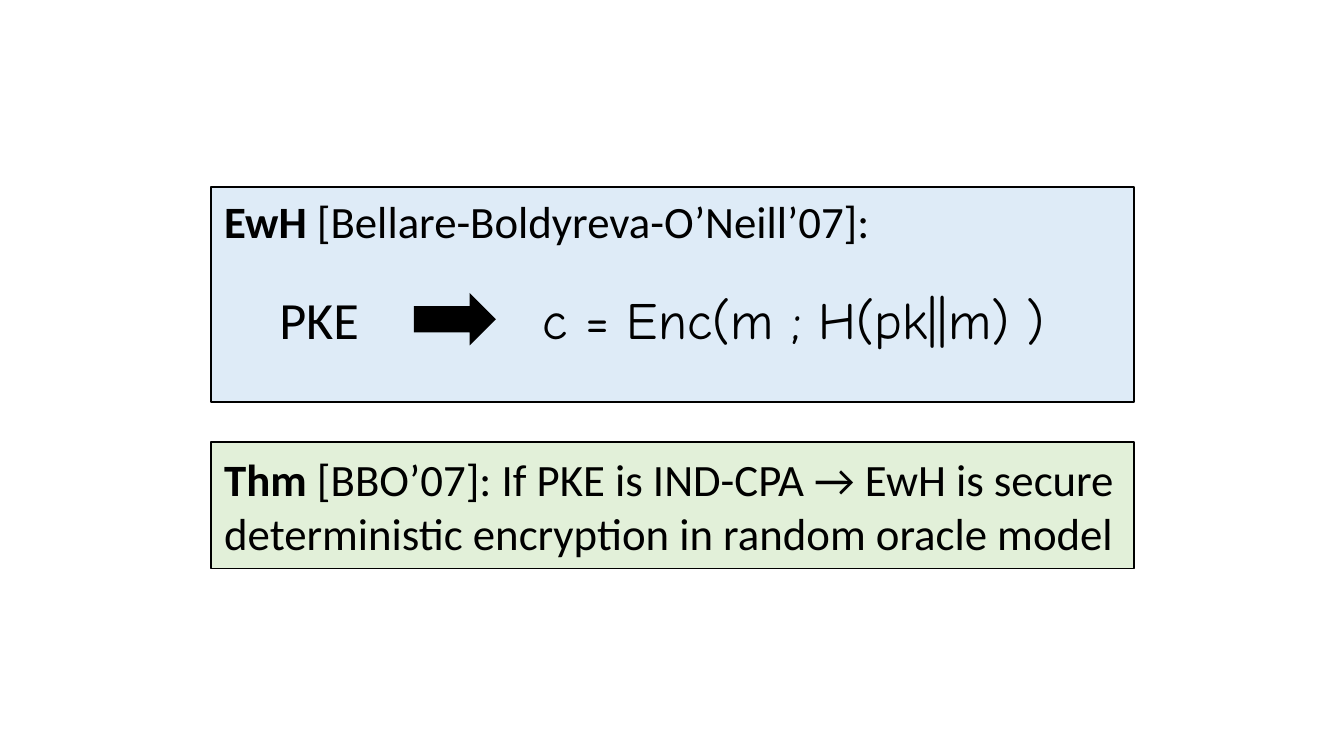
from pptx import Presentation
from pptx.dml.color import RGBColor
from pptx.enum.shapes import MSO_SHAPE
from pptx.enum.text import MSO_ANCHOR, MSO_AUTO_SIZE, PP_ALIGN
from pptx.util import Inches, Pt

RECT, ARROW = MSO_SHAPE.RECTANGLE, MSO_SHAPE.RIGHT_ARROW
TOP, MIDDLE = MSO_ANCHOR.TOP, MSO_ANCHOR.MIDDLE
LEFT, GROW = PP_ALIGN.LEFT, MSO_AUTO_SIZE.SHAPE_TO_FIT_TEXT

COLORS = {"ink": "000000", "scheme": "DEEBF7", "theorem": "E2F0D9"}
WIDTH = Inches(10)
HEIGHT = WIDTH * 9 // 16
UNIT = 0.1  # inches per grid column and row
EDGE, SPAN = 15.7, 68.7  # left column and width shared by both panels
BODY, LARGE = 24, 28


def color(name):
    return RGBColor.from_string(COLORS[name])


def grid(*cells):
    """Turn columns and rows into lengths."""
    return [Inches(cell * UNIT) for cell in cells]


def style(run, size, font="Calibri", bold=False):
    run.font.size = Pt(size)
    run.font.name = font
    run.font.bold = bold
    run.font.color.rgb = color("ink")


def block(shapes, kind, place, fill):
    shape = shapes.add_shape(kind, *grid(*place))
    shape.shadow.inherit = False
    shape.fill.solid()
    shape.fill.fore_color.rgb = color(fill)
    shape.line.fill.background()
    return shape


def panel(shapes, top, height, fill, anchor, label, text):
    """Add an outlined box whose text opens with a bold label."""
    box = block(shapes, RECT, (EDGE, top, SPAN, height), fill)
    box.line.color.rgb = color("ink")
    box.line.width = Pt(1)
    frame = box.text_frame
    frame.word_wrap = True
    frame.vertical_anchor = anchor
    para = frame.paragraphs[0]
    para.alignment = LEFT
    for part, bold in ((label, True), (text, False)):
        run = para.add_run()
        run.text = part
        style(run, BODY, bold=bold)


def term(shapes, left, width, text, font):
    """Add one unwrapped side of the transformation."""
    frame = shapes.add_textbox(*grid(left, 20.9, width, 5.7)).text_frame
    frame.word_wrap = False
    frame.auto_size = GROW
    frame.text = text
    style(frame.paragraphs[0].runs[0], LARGE, font)


def main():
    deck = Presentation()
    deck.slide_width, deck.slide_height = WIDTH, HEIGHT
    slide = deck.slides.add_slide(deck.slide_layouts[6])

    scheme = slide.shapes.add_group_shape().shapes
    panel(scheme, 13.9, 16, "scheme", TOP,
          "EwH", " [Bellare-Boldyreva-O’Neill’07]:")
    term(scheme, 19.8, 8, "PKE", "Calibri")
    block(scheme, ARROW, (30.8, 21.8, 6.1, 3.9), "ink")
    term(scheme, 39.4, 39.8, "c = Enc(m ; H(pk||m) )", "Comic Neue")

    panel(slide.shapes, 32.9, 9.4, "theorem", MIDDLE, "Thm",
          " [BBO’07]: If PKE is IND-CPA → EwH is secure "
          "deterministic encryption in random oracle model")
    deck.save("out.pptx")


if __name__ == "__main__":
    main()
